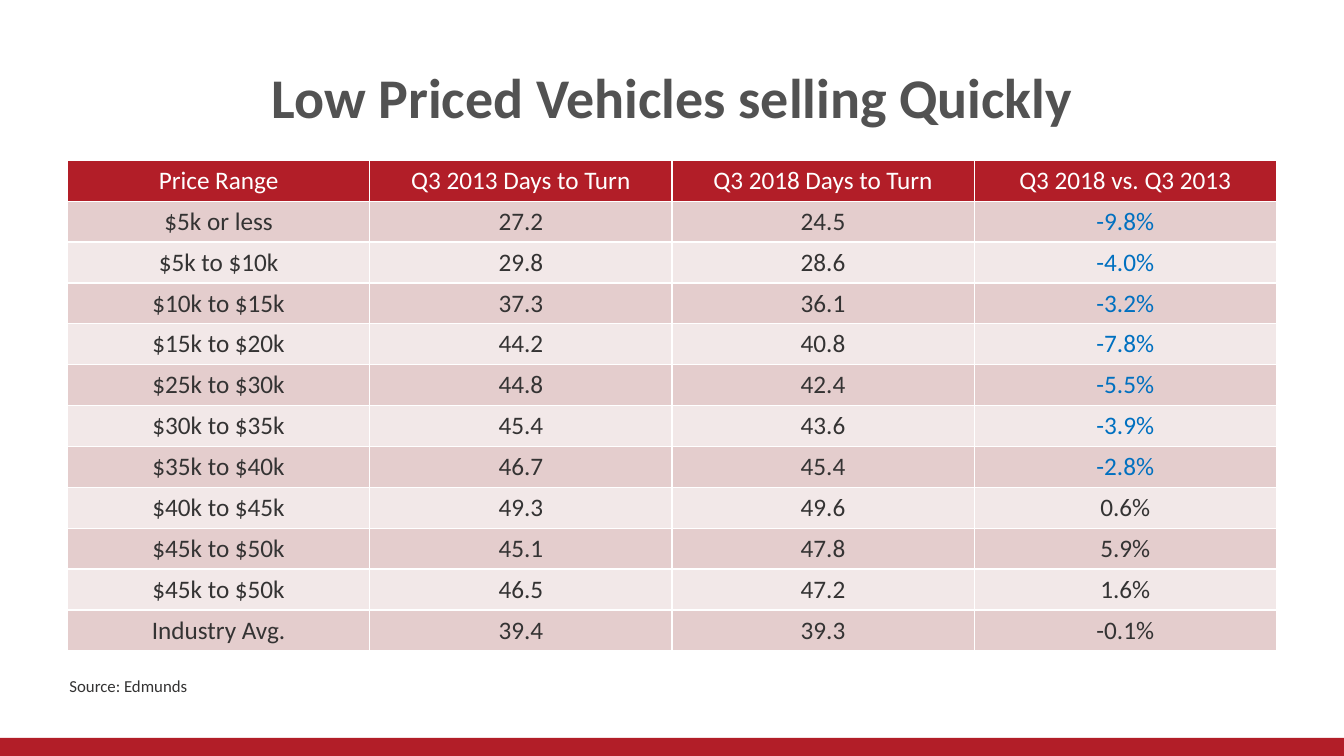
from lxml.etree import SubElement
from pptx import Presentation
from pptx.dml.color import RGBColor
from pptx.enum.shapes import MSO_SHAPE
from pptx.enum.text import MSO_ANCHOR, PP_ALIGN
from pptx.oxml.ns import qn
from pptx.util import Inches, Pt

RED = "B21E28"
WHITE = "FFFFFF"
GRAY = "525252"
INK = "343333"
BLUE = "0070C0"
BANDS = ("E4CDCD", "F2E8E8")

HEADINGS = ("Price Range", "Q3 2013 Days to Turn", "Q3 2018 Days to Turn", "Q3 2018 vs. Q3 2013")
AVERAGE = "Industry Avg."
TURN_RATES = (
    ("$5k or less", "27.2", "24.5", "-9.8%"),
    ("$5k to $10k", "29.8", "28.6", "-4.0%"),
    ("$10k to $15k", "37.3", "36.1", "-3.2%"),
    ("$15k to $20k", "44.2", "40.8", "-7.8%"),
    ("$25k to $30k", "44.8", "42.4", "-5.5%"),
    ("$30k to $35k", "45.4", "43.6", "-3.9%"),
    ("$35k to $40k", "46.7", "45.4", "-2.8%"),
    ("$40k to $45k", "49.3", "49.6", "0.6%"),
    ("$45k to $50k", "45.1", "47.8", "5.9%"),
    ("$45k to $50k", "46.5", "47.2", "1.6%"),
    (AVERAGE, "39.4", "39.3", "-0.1%"),
)


def paint(color_format, value):
    color_format.rgb = RGBColor.from_string(value)


def fill_with(target, value):
    target.fill.solid()
    paint(target.fill.fore_color, value)


def write(frame, text, color, align=PP_ALIGN.LEFT, **font_values):
    para = frame.paragraphs[0]
    para.alignment = align
    span = para.add_run()
    span.text = text
    for name, value in {"name": "Calibri", "bold": False, **font_values}.items():
        setattr(span.font, name, value)
    paint(span.font.color, color)


def add_borders(cell, color, width):
    properties = cell._tc.get_or_add_tcPr()
    for index, side in enumerate(("lnL", "lnR", "lnT", "lnB")):
        line = properties.makeelement(qn(f"a:{side}"), {"w": str(Pt(width))})
        solid = SubElement(line, qn("a:solidFill"))
        SubElement(solid, qn("a:srgbClr"), val=color)
        properties.insert(index, line)


def add_footer_bar(page, box):
    bar = page.shapes.add_shape(MSO_SHAPE.RECTANGLE, *map(Inches, box))
    bar.shadow.inherit = False
    bar.line.fill.background()
    fill_with(bar, RED)


def add_title(page, box):
    title = page.shapes.title
    for name, value in zip(("left", "top", "width", "height"), box):
        setattr(title, name, Inches(value))
    title.text_frame.vertical_anchor = MSO_ANCHOR.MIDDLE
    write(title.text_frame, "Low Priced Vehicles selling Quickly", GRAY,
          PP_ALIGN.CENTER, size=Pt(40), bold=True)


def text_color(row, column, text, label):
    if row == 0:
        return WHITE
    faster = column == len(HEADINGS) - 1 and text.startswith("-")
    return BLUE if faster and label != AVERAGE else INK


def add_turn_table(page, box):
    rows = (HEADINGS, *TURN_RATES)
    table = page.shapes.add_table(len(rows), len(HEADINGS), *map(Inches, box)).table
    for row, values in enumerate(rows):
        for column, text in enumerate(values):
            cell = table.cell(row, column)
            fill_with(cell, BANDS[(row - 1) % 2] if row else RED)
            add_borders(cell, WHITE, 1)
            cell.vertical_anchor = MSO_ANCHOR.MIDDLE
            write(cell.text_frame, text, text_color(row, column, text, values[0]),
                  PP_ALIGN.CENTER, size=Pt(18))


def add_source(page, box):
    source = page.shapes.add_textbox(*map(Inches, box))
    source.text_frame.word_wrap = True
    write(source.text_frame, "Source: Edmunds", INK, size=Pt(12))


def main():
    deck = Presentation()
    width, height, margin = 13.33, 7.5, 0.67
    deck.slide_width, deck.slide_height = Inches(width), Inches(height)
    page = deck.slides.add_slide(deck.slide_layouts[5])
    content_width = width - 2 * margin
    add_footer_bar(page, (0, 7.32, width, height - 7.32))
    add_title(page, (margin, 0.55, content_width, 0.8))
    add_turn_table(page, (margin, 1.59, content_width, 4.87))
    add_source(page, (0.59, 6.65, 5.03, 0.3))
    deck.save("out.pptx")


if __name__ == "__main__":
    main()
